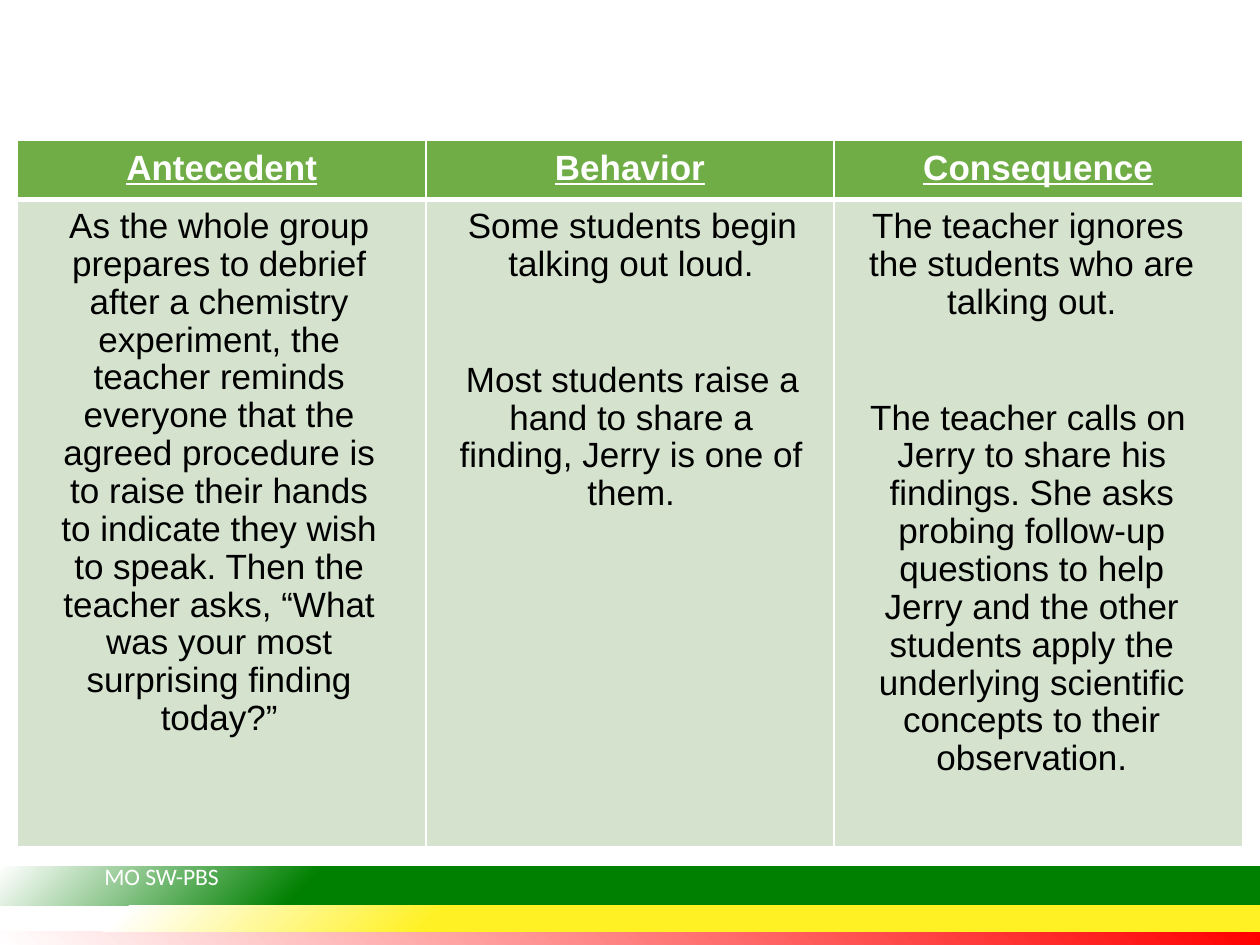
"""Antecedent, behavior and consequence table above a striped footer."""
from lxml.etree import fromstring
from pptx import Presentation
from pptx.dml.color import RGBColor
from pptx.enum.shapes import MSO_SHAPE as Shape
from pptx.enum.text import PP_ALIGN as Align
from pptx.util import Inches, Pt

COLORS = {
    "white": "FFFFFF", "black": "000000", "header": "70AD47", "body": "D4E2CE",
    "red": "FF0000", "green": "008000", "yellow": "FFF123",
}
NS = 'xmlns:a="http://schemas.openxmlformats.org/drawingml/2006/main"'


def style_font(font, name, size, color):
    font.name = name
    font.size = Pt(size)
    font.color.rgb = RGBColor.from_string(COLORS[color])


def fill_cell(cell, color, borders):
    cell.fill.solid()
    cell.fill.fore_color.rgb = RGBColor.from_string(COLORS[color])
    cell.margin_left = cell.margin_right = Inches(0.07)
    cell.margin_top = cell.margin_bottom = Inches(0.07)
    for position, (side, width) in enumerate(zip("LRTB", borders)):
        cell._tc.tcPr.insert(position, fromstring(
            f'<a:ln{side} {NS} w="{Pt(width)}"><a:solidFill>'
            f'<a:srgbClr val="{COLORS["white"]}"/></a:solidFill></a:ln{side}>'))


prs = Presentation()
prs.slide_width = Inches(10)
prs.slide_height = Inches(7.5)
slide = prs.slides.add_slide(prs.slide_layouts[6])

stripes = [
    (7.39, 0.12, [(0, "red"), (100, "white")], 'l="100000" b="100000"'),
    (6.88, 0.31, [(0, "green"), (75, "green"), (100, "white")], 'l="100000" t="100000"'),
    (7.19, 0.2, [(0, "yellow"), (65, "yellow"), (90, "white"), (100, "white")],
     'l="100000" t="100000"'),
]
for top, height, stops, focus in stripes:
    stripe = slide.shapes.add_shape(
        Shape.RECTANGLE, 0, Inches(top), Inches(10), Inches(height))
    stripe.shadow.inherit = False
    stripe.line.fill.background()
    stripe.fill.background()
    stop_xml = "".join(
        f'<a:gs pos="{at * 1000}"><a:srgbClr val="{COLORS[color]}"/></a:gs>'
        for at, color in stops)
    properties = stripe._element.spPr
    properties.replace(properties.find("{*}noFill"), fromstring(
        f'<a:gradFill {NS} rotWithShape="1"><a:gsLst>{stop_xml}</a:gsLst>'
        f'<a:path path="circle"><a:fillToRect {focus}/></a:path></a:gradFill>'))

footer = slide.shapes.add_textbox(Inches(0.73), Inches(6.79), Inches(1.92), Inches(0.33))
footer.text_frame.word_wrap = True
footer.text_frame.text = "MO SW-PBS"
footer_run = footer.text_frame.paragraphs[0].runs[0]
style_font(footer_run.font, "Calibri", 13.5, "white")
footer_run._r.rPr.find("{*}solidFill").addnext(fromstring(
    f'<a:effectLst {NS}><a:outerShdw blurRad="38100" dist="38100" dir="2700000">'
    f'<a:srgbClr val="{COLORS["black"]}"><a:alpha val="43000"/></a:srgbClr>'
    '</a:outerShdw></a:effectLst>'))

columns = [
    ("Antecedent", (0.25, 0.29, 0), [
        "As the whole group prepares to debrief after a chemistry experiment, the "
        "teacher reminds everyone that the agreed procedure is to raise their hands "
        "to indicate they wish to speak. Then the teacher asks, “What was your most "
        "surprising finding today?”"]),
    ("Behavior", (0.19, 0.17, 0.02), [
        "Some students begin talking out loud.",
        "Most students raise a hand to share a finding, Jerry is one of them."]),
    ("Consequence", (0.12, 0.22, -0.06), [
        "The teacher ignores the students who are talking out.",
        "The teacher calls on Jerry to share his findings. She asks probing follow-up "
        "questions to help Jerry and the other students apply the underlying "
        "scientific concepts to their observation."]),
]
abc_table = slide.shapes.add_table(
    2, 3, Inches(0.14), Inches(1.11), Inches(9.72), Inches(5.61)).table
abc_table.rows[0].height = Inches(0.47)
abc_table.rows[1].height = Inches(5.14)

for index, (heading, (left, right, indent), events) in enumerate(columns):
    abc_table.columns[index].width = Inches(3.24)
    header = abc_table.cell(0, index)
    fill_cell(header, "header", (1, 1, 1, 3))
    header.text_frame.text = heading
    title = header.text_frame.paragraphs[0]
    title.alignment = Align.CENTER
    style_font(title.runs[0].font, "Arial", 20, "white")
    title.runs[0].font.bold = True
    title.runs[0].font.underline = True

    body = abc_table.cell(1, index)
    fill_cell(body, "body", (1, 1, 3, 1))
    body.text_frame.text = "\n".join(events)
    for order, event in enumerate(body.text_frame.paragraphs):
        event.alignment = Align.CENTER
        event.line_spacing = 0.97
        if order:
            event.space_before = Pt(44.6)
        margins = event._p.get_or_add_pPr()
        margins.set("marL", str(Inches(left)))
        margins.set("marR", str(Inches(right)))
        margins.set("indent", str(Inches(indent)))
        style_font(event.runs[0].font, "Arial", 20, "black")
        event.runs[0].font.bold = False

prs.save("out.pptx")
